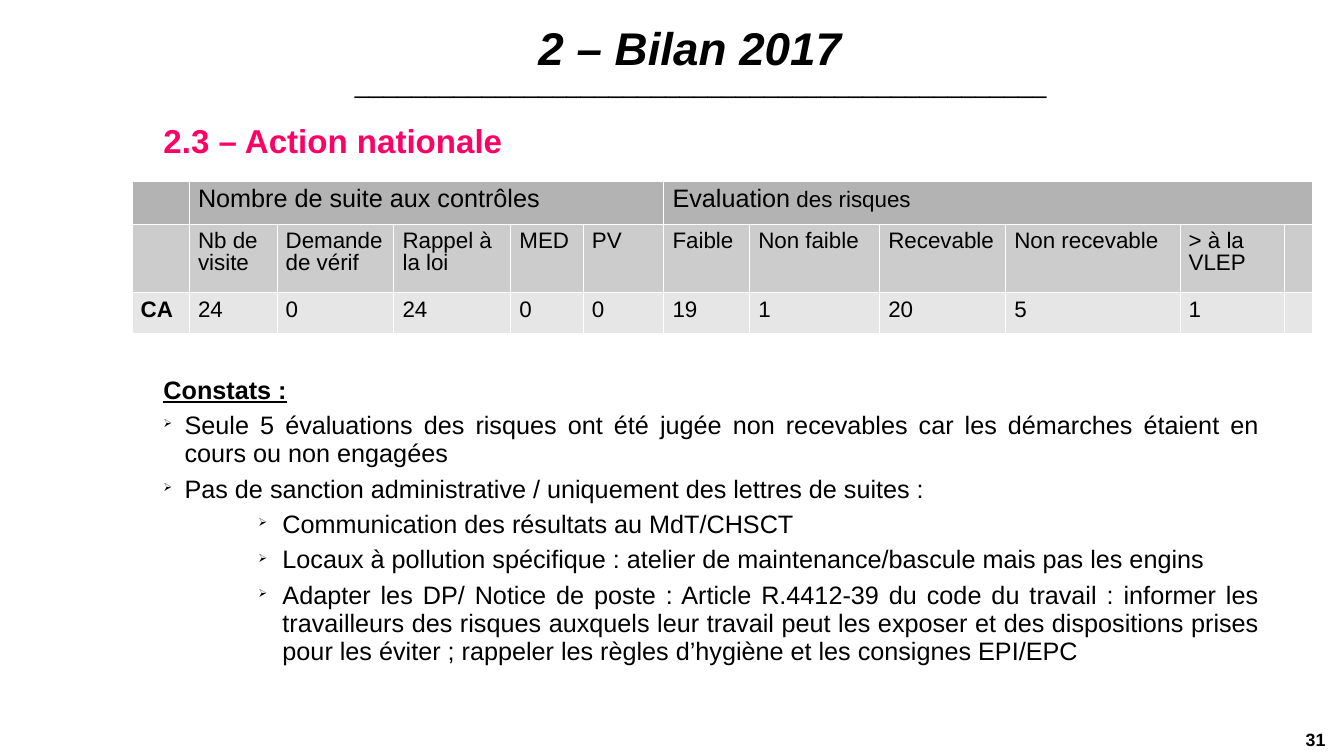
from dataclasses import dataclass

from lxml.etree import SubElement
from pptx import Presentation
from pptx.dml.color import RGBColor
from pptx.enum.text import MSO_ANCHOR, MSO_AUTO_SIZE, PP_ALIGN
from pptx.oxml.ns import qn
from pptx.util import Pt

BLACK = RGBColor(0x00, 0x00, 0x00)
PINK = RGBColor(0xFF, 0x00, 0x66)
ROW_FILLS = [RGBColor(shade, shade, shade) for shade in (0xB3, 0xCC, 0xE6)]
FONT = "Arial"

COLUMN_WIDTHS = [41, 62.6, 83.5, 83.5, 51.8, 57.6, 61.2, 92.9, 90, 124.6, 74.9, 19.4]
ROW_HEIGHTS = [28.8, 49, 28.8]
GROUPS = {1: ["Nombre de suite aux contrôles"], 6: ["Evaluation", " des risques"]}
HEADERS = ["", "Nb de visite", "Demande de vérif", "Rappel à la loi", "MED", "PV",
           "Faible", "Non faible", "Recevable", "Non recevable", "> à la VLEP", ""]
RESULTS = ["CA", "24", "0", "24", "0", "0", "19", "1", "20", "5", "1", ""]


@dataclass(frozen=True)
class Finding:
    text: str
    level: int = 0


FINDINGS = [
    Finding("Seule 5 évaluations des risques ont été jugée non recevables car les "
            "démarches étaient en cours ou non engagées"),
    Finding("Pas de sanction administrative / uniquement des lettres de suites :"),
    Finding("Communication des résultats au MdT/CHSCT", 4),
    Finding("Locaux à pollution spécifique : atelier de maintenance/bascule mais pas "
            "les engins", 4),
    Finding("Adapter les DP/ Notice de poste : Article R.4412-39 du code du travail : "
            "informer les travailleurs des risques auxquels leur travail peut les exposer "
            "et des dispositions prises pour les éviter ; rappeler les règles d’hygiène "
            "et les consignes EPI/EPC", 4),
]


def set_font(target, size: float, bold: bool = False, color: RGBColor = BLACK) -> None:
    font = target.font
    font.name, font.size, font.bold = FONT, Pt(size), bold
    font.color.rgb = color


def set_insets(frame, top: float) -> None:
    frame.word_wrap = True
    frame.auto_size = MSO_AUTO_SIZE.NONE
    frame.margin_left = frame.margin_right = frame.margin_bottom = 0
    frame.margin_top = Pt(top)


def add_text_frame(slide, left: float, top: float, width: float, height: float,
                   inset: float = 1.4):
    frame = slide.shapes.add_textbox(Pt(left), Pt(top), Pt(width), Pt(height)).text_frame
    set_insets(frame, inset)
    return frame


def set_indent(paragraph, left: float, hanging: float) -> None:
    properties = paragraph._p.get_or_add_pPr()
    properties.set("marL", str(Pt(left)))
    properties.set("indent", str(-Pt(hanging)))


def add_bullet(paragraph) -> None:
    properties = paragraph._p.get_or_add_pPr()
    bullet_color = SubElement(properties, qn("a:buClr"))
    SubElement(bullet_color, qn("a:srgbClr"), val=str(BLACK))
    SubElement(properties, qn("a:buSzPct"), val="45000")
    SubElement(properties, qn("a:buChar"), char="➢")


def space_body(paragraph) -> None:
    paragraph.alignment = PP_ALIGN.JUSTIFY
    paragraph.line_spacing = 0.93
    paragraph.space_after = Pt(5.2)


def add_white_borders(cell) -> None:
    properties = cell._tc.get_or_add_tcPr()
    for side in ("L", "R", "T", "B"):
        border = SubElement(properties, qn(f"a:ln{side}"), w=str(Pt(0.06)))
        fill = SubElement(border, qn("a:solidFill"))
        SubElement(fill, qn("a:srgbClr"), val="FFFFFF")


def format_cell(cell, fill: RGBColor) -> None:
    add_white_borders(cell)
    cell.fill.solid()
    cell.fill.fore_color.rgb = fill
    cell.margin_left = cell.margin_right = Pt(6.5)
    cell.margin_top, cell.margin_bottom = Pt(5.4), Pt(3.6)
    cell.text_frame.paragraphs[0].line_spacing = 0.87


def add_title(slide) -> None:
    title = slide.shapes.title
    title.left, title.top, title.width, title.height = Pt(171.4), Pt(11.5), Pt(643), Pt(117.4)
    title.text_frame.text = "2 – Bilan 2017"
    set_insets(title.text_frame, 6)
    title.text_frame.vertical_anchor = MSO_ANCHOR.TOP
    heading = title.text_frame.paragraphs[0]
    heading.alignment = PP_ALIGN.CENTER
    heading.line_spacing = 0.93
    set_font(heading, 32.7, bold=True)
    heading.font.italic = True


def add_rule(slide) -> None:
    rule = add_text_frame(slide, 245.5, 49, 555.8, 28).paragraphs[0]
    rule.text = "_" * 49
    set_indent(rule, 31, 23)
    rule.line_spacing = 0.93
    set_font(rule, 18.1)


def add_findings(slide) -> None:
    frame = add_text_frame(slide, 116.8, 87.1, 782.6, 262)
    section = frame.paragraphs[0]
    section.text = "2.3 – Action nationale"
    space_body(section)
    set_font(section, 23.6, bold=True, color=PINK)

    label = frame.add_paragraph()
    label.text = "Constats :"
    space_body(label)
    label.space_before = Pt(149)
    set_font(label, 18, bold=True)
    label.font.underline = True

    for finding in FINDINGS:
        paragraph = frame.add_paragraph()
        paragraph.text = finding.text
        paragraph.level = finding.level
        add_bullet(paragraph)
        set_indent(paragraph, *((85, 17.3) if finding.level else (15.1, 15.1)))
        space_body(paragraph)
        set_font(paragraph, 18)


def add_results_table(slide) -> None:
    table = slide.shapes.add_table(len(ROW_HEIGHTS), len(COLUMN_WIDTHS), Pt(94), Pt(129),
                                   Pt(sum(COLUMN_WIDTHS)), Pt(sum(ROW_HEIGHTS))).table
    table.first_row = table.horz_banding = False
    for column, width in zip(table.columns, COLUMN_WIDTHS):
        column.width = Pt(width)
    for row, height, fill in zip(table.rows, ROW_HEIGHTS, ROW_FILLS):
        row.height = Pt(height)
        for cell in row.cells:
            format_cell(cell, fill)

    for first, last in ((1, 5), (6, 11)):
        table.cell(0, first).merge(table.cell(0, last))
        group = table.cell(0, first).text_frame.paragraphs[0]
        for text, size in zip(GROUPS[first], (18, 16)):
            run = group.add_run()
            run.text = text
            set_font(run, size)

    for row_index, texts in enumerate((HEADERS, RESULTS), start=1):
        for column_index, text in enumerate(texts):
            paragraph = table.cell(row_index, column_index).text_frame.paragraphs[0]
            paragraph.text = text
            set_font(paragraph, 16, bold=text == "CA")


def add_page_number(slide) -> None:
    number = add_text_frame(slide, 858.2, 520.6, 88.6, 37.4, inset=0).paragraphs[0]
    number.text = "31"
    number.alignment = PP_ALIGN.RIGHT
    set_font(number, 12.7, bold=True)


def main() -> None:
    presentation = Presentation()
    presentation.slide_width, presentation.slide_height = Pt(960), Pt(540)
    slide = presentation.slides.add_slide(presentation.slide_layouts[5])
    add_page_number(slide)
    add_title(slide)
    add_rule(slide)
    add_findings(slide)
    add_results_table(slide)
    presentation.save("out.pptx")


if __name__ == "__main__":
    main()
